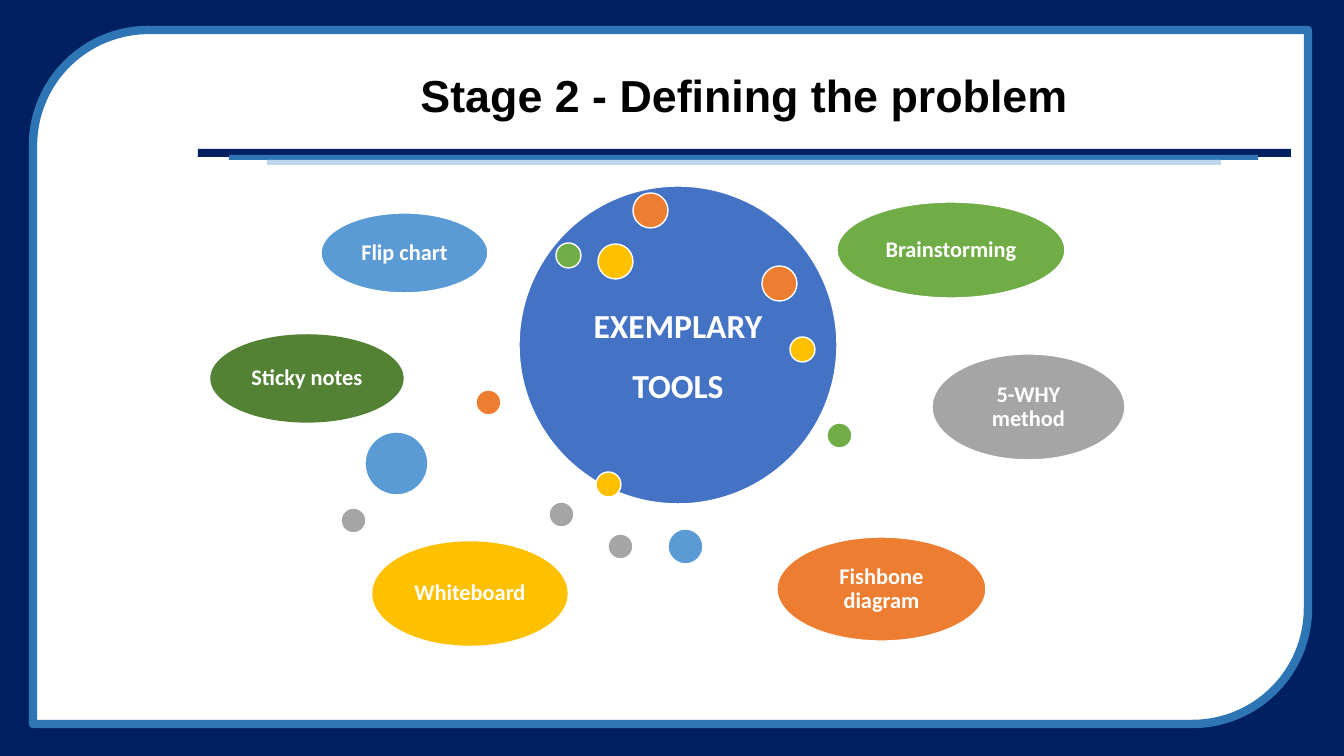
from pptx import Presentation
from pptx.dml.color import RGBColor
from pptx.enum.shapes import MSO_SHAPE as SHAPE
from pptx.enum.text import MSO_ANCHOR, PP_ALIGN
from pptx.util import Emu, Pt

NAVY = RGBColor(0x00, 0x20, 0x60)
STEEL = RGBColor(0x2E, 0x75, 0xB6)
PALE = RGBColor(0xBD, 0xD7, 0xEE)
WHITE = RGBColor(0xFF, 0xFF, 0xFF)
BLACK = RGBColor(0x00, 0x00, 0x00)
ROYAL = RGBColor(0x44, 0x72, 0xC4)
BLUE = RGBColor(0x5B, 0x9B, 0xD5)
ORANGE = RGBColor(0xED, 0x7D, 0x31)
GRAY = RGBColor(0xA5, 0xA5, 0xA5)
GOLD = RGBColor(0xFF, 0xC0, 0x00)
GREEN = RGBColor(0x70, 0xAD, 0x47)
FOREST = RGBColor(0x54, 0x82, 0x35)

# Content: boxes are left, top, width, height in px
WIDTH, HEIGHT = 1344, 756
TITLE = ("Stage 2 - Defining the problem", (198, 49, 1093, 98))
BARS = [
    ((198, 149, 1093, 8), NAVY),
    ((229, 155, 1029, 5), STEEL),
    ((267, 160, 954, 5), PALE),
]
HUB = ("EXEMPLARY TOOLS", (519, 186, 318, 318))
TOOLS = [
    ("5-WHY method", (932, 354, 193, 106), GRAY, WHITE),
    ("Brainstorming", (837, 202, 228, 96), GREEN, WHITE),
    ("Flip chart", (321, 213, 167, 80), BLUE, WHITE),
    ("Fishbone diagram", (777, 537, 209, 104), ORANGE, WHITE),
    ("Sticky notes", (211, 335, 192, 87), FOREST, FOREST),
    ("Whiteboard", (373, 542, 194, 103), GOLD, GOLD),
]
SMALL, MEDIUM, LARGE = 25, 35, 63
DOTS = [
    (633, 193, MEDIUM, ORANGE), (549, 502, SMALL, GRAY),
    (790, 337, SMALL, GOLD), (668, 529, MEDIUM, BLUE),
    (556, 243, SMALL, GREEN), (476, 390, SMALL, ORANGE),
    (598, 244, MEDIUM, GOLD), (365, 432, LARGE, BLUE),
    (762, 266, MEDIUM, ORANGE), (341, 508, SMALL, GRAY),
    (596, 472, SMALL, GOLD), (827, 423, SMALL, GREEN),
    (608, 534, SMALL, GRAY),
]


def px(n):
    return Emu(round(n * 914400 / 100.8))


prs = Presentation()
prs.slide_width, prs.slide_height = px(WIDTH), px(HEIGHT)
s = prs.slides.add_slide(prs.slide_layouts[6])


def add_shape(kind, box, fill, line=None, line_pt=1):
    sp = s.shapes.add_shape(kind, *map(px, box))
    sp.shadow.inherit = False
    sp.fill.solid()
    sp.fill.fore_color.rgb = fill
    if line is None:
        sp.line.fill.background()
    else:
        sp.line.color.rgb = line
        sp.line.width = Pt(line_pt)
    return sp


def set_text(sp, text, size, color, font="Calibri", spacing=0.9, inset=7):
    tf = sp.text_frame
    tf.word_wrap = True
    tf.vertical_anchor = MSO_ANCHOR.MIDDLE
    tf.margin_left = tf.margin_right = tf.margin_top = tf.margin_bottom = px(inset)
    tf.text = text
    p = tf.paragraphs[0]
    p.alignment = PP_ALIGN.CENTER
    p.line_spacing = spacing
    r = p.runs[0]
    r.font.name, r.font.size, r.font.bold = font, Pt(size), True
    r.font.color.rgb = color


# Background and frame
add_shape(SHAPE.RECTANGLE, (0, 0, WIDTH, HEIGHT), NAVY)
add_shape(SHAPE.ROUND_2_DIAG_RECTANGLE, (33, 30, 1275, 694), WHITE, STEEL, 6)

# Title and the bars under it
for box, color in BARS:
    add_shape(SHAPE.RECTANGLE, box, color)
text, box = TITLE
set_text(s.shapes.add_textbox(*map(px, box)), text, 32, BLACK, "Arial")

# Central circle
text, box = HUB
set_text(add_shape(SHAPE.OVAL, box, ROYAL, WHITE), text, 24, WHITE,
         spacing=1.5, inset=10)

# Tools around it
for text, box, color, line in TOOLS:
    set_text(add_shape(SHAPE.OVAL, box, color, line), text, 16, WHITE)

# Decorative dots
for x, y, d, color in DOTS:
    add_shape(SHAPE.OVAL, (x, y, d, d), color, WHITE)

prs.save("out.pptx")
